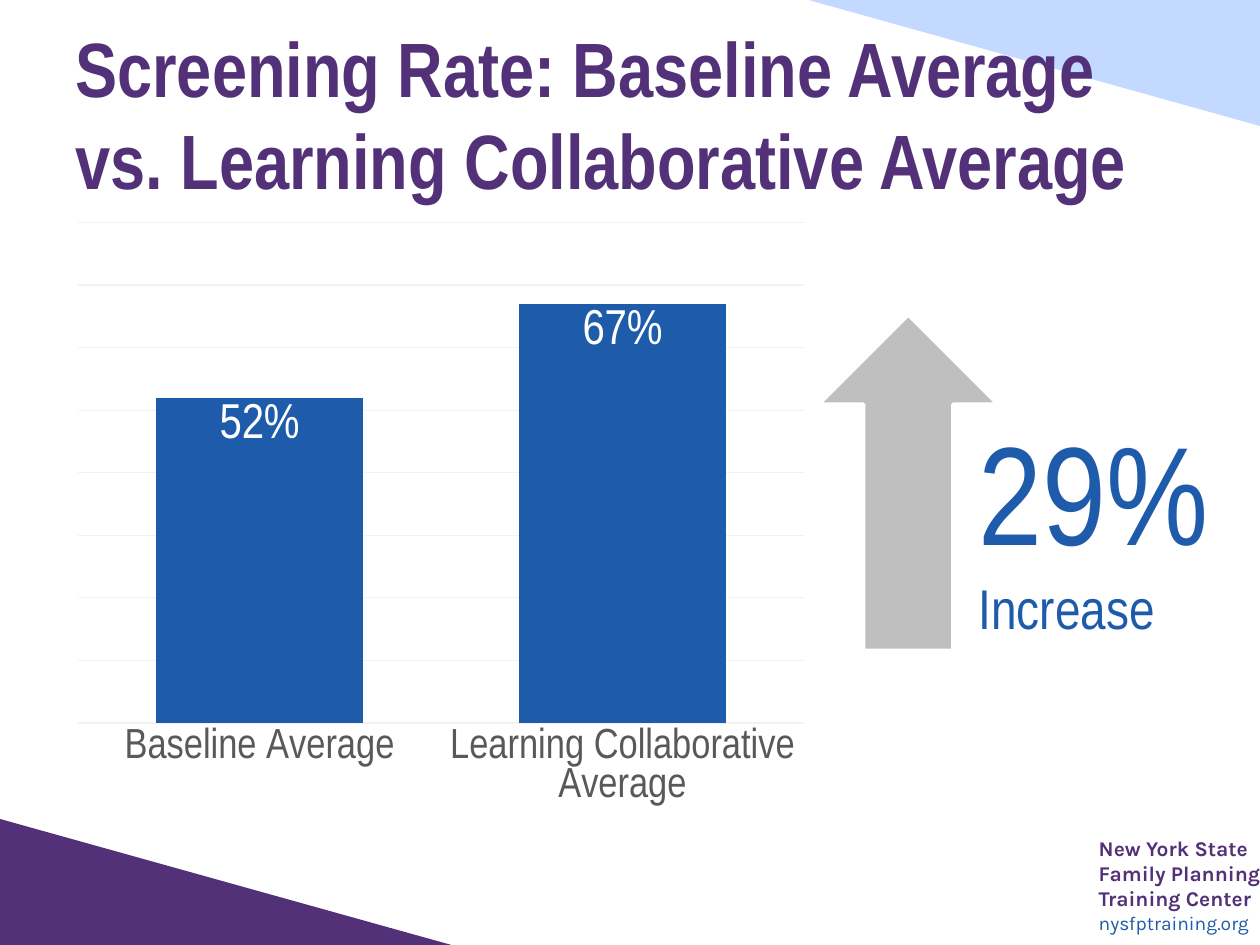
from pptx import Presentation
from pptx import util as u
from pptx.chart import data as cd
from pptx.dml import color as col
from pptx.enum import chart as ch, shapes, text as tx

NARROW, KARLA = "Arial Narrow", "Karla"
PURPLE, BLUE, LINK = "523178", "1E5BAA", "1D5CA9"
PALE, GRAY, DARK = "C3D9FF", "BFBFBF", "595959"
GRID, WHITE = "F2F2F2", "FFFFFF"

# Lines of text: words, size, font, colour, bold
TITLE = [("Screening Rate: Baseline Average vs. Learning Collaborative Average",
          44, NARROW, PURPLE, True)]
CENTER = [(words, 12, KARLA, PURPLE, True) for words in
          ("New York State", "Family Planning", "Training Center")]
CENTER += [("nysfptraining.org", 11, KARLA, LINK, False)]
GAIN = [("29%", 80, NARROW, BLUE, False),
        ("Increase", 32, NARROW, BLUE, False)]
RATES = {"Baseline Average": 0.52, "Learning Collaborative Average": 0.67}

# Left, top, width, height in centimetres
WIDE, HIGH = 25.4, 19.05
WEDGE = (9.1, 2.54)
TITLE_BOX = (1.27, 0.76, 22.86, 3.02)
CHART_BOX = (1.27, 4.24, 15.24, 12.27)
ARROW_BOX = (16.51, 6.35, 3.6, 6.76)
GAIN_BOX = (19.48, 8.05, 5.28, 5.05)
CENTER_BOX = (22.15, 16.84, 3.84, 2.06)


def rgb(code):
    return col.RGBColor.from_string(code)


def place(box):
    return [u.Cm(n) for n in box]


def style(font, size, face, shade, bold=False):
    font.size, font.name, font.bold = u.Pt(size), face, bold
    font.color.rgb = rgb(shade)


def add_shape(slide, kind, box, fill, turn=0):
    shape = slide.shapes.add_shape(kind, *place(box))
    shape.shadow.inherit = False
    shape.fill.solid()
    shape.fill.fore_color.rgb = rgb(fill)
    shape.line.fill.background()
    shape.rotation = turn
    return shape


def add_text(slide, box, lines, wrap=True, inset=True):
    frame = slide.shapes.add_textbox(*place(box)).text_frame
    frame.word_wrap = wrap
    if not inset:
        frame.margin_left = frame.margin_right = 0
        frame.margin_top = frame.margin_bottom = 0
    for i, (words, *look) in enumerate(lines):
        para = frame.add_paragraph() if i else frame.paragraphs[0]
        run = para.add_run()
        run.text = words
        style(run.font, *look)
    return frame


def add_rates(slide):
    data = cd.CategoryChartData(number_format="0%")
    data.categories = list(RATES)
    data.add_series("Series 1", list(RATES.values()))
    kind = ch.XL_CHART_TYPE.COLUMN_CLUSTERED
    chart = slide.shapes.add_chart(kind, *place(CHART_BOX), data).chart
    chart.has_legend = chart.has_title = False
    style(chart.font, 24, NARROW, "000000")

    cat, val = chart.category_axis, chart.value_axis
    cat.major_tick_mark = ch.XL_TICK_MARK.NONE
    cat.format.line.fill.background()
    style(cat.tick_labels.font, 24, NARROW, DARK)
    val.minimum_scale, val.maximum_scale, val.major_unit = 0, 0.8, 0.1
    val.visible = False
    val.has_major_gridlines = True
    line = val.major_gridlines.format.line
    line.color.rgb, line.width = rgb(GRID), u.Pt(0.75)

    plot = chart.plots[0]
    plot.gap_width, plot.overlap = 75, -27
    plot.vary_by_categories = False
    bars = plot.series[0]
    bars.format.fill.solid()
    bars.format.fill.fore_color.rgb = rgb(BLUE)
    labels = bars.data_labels
    labels.show_value = True
    labels.number_format, labels.number_format_is_linked = "0%", False
    labels.position = ch.XL_LABEL_POSITION.INSIDE_END
    style(labels.font, 28, NARROW, WHITE)


def main():
    deck = Presentation()
    deck.slide_width, deck.slide_height = u.Cm(WIDE), u.Cm(HIGH)
    slide = deck.slides.add_slide(deck.slide_layouts[6])
    kinds = shapes.MSO_SHAPE
    wide, high = WEDGE
    add_shape(slide, kinds.RIGHT_TRIANGLE, (0, HIGH - high, *WEDGE), PURPLE)
    add_text(slide, CENTER_BOX, CENTER, wrap=False, inset=False)
    add_shape(slide, kinds.RIGHT_TRIANGLE, (WIDE - wide, 0, *WEDGE), PALE, 180)
    title = add_text(slide, TITLE_BOX, TITLE)
    title.vertical_anchor = tx.MSO_ANCHOR.MIDDLE
    add_rates(slide)
    arrow = add_shape(slide, kinds.UP_ARROW, ARROW_BOX, GRAY)
    arrow.line.color.rgb, arrow.line.width = rgb(WHITE), u.Pt(2)
    add_text(slide, GAIN_BOX, GAIN)
    deck.save("out.pptx")


if __name__ == "__main__":
    main()
